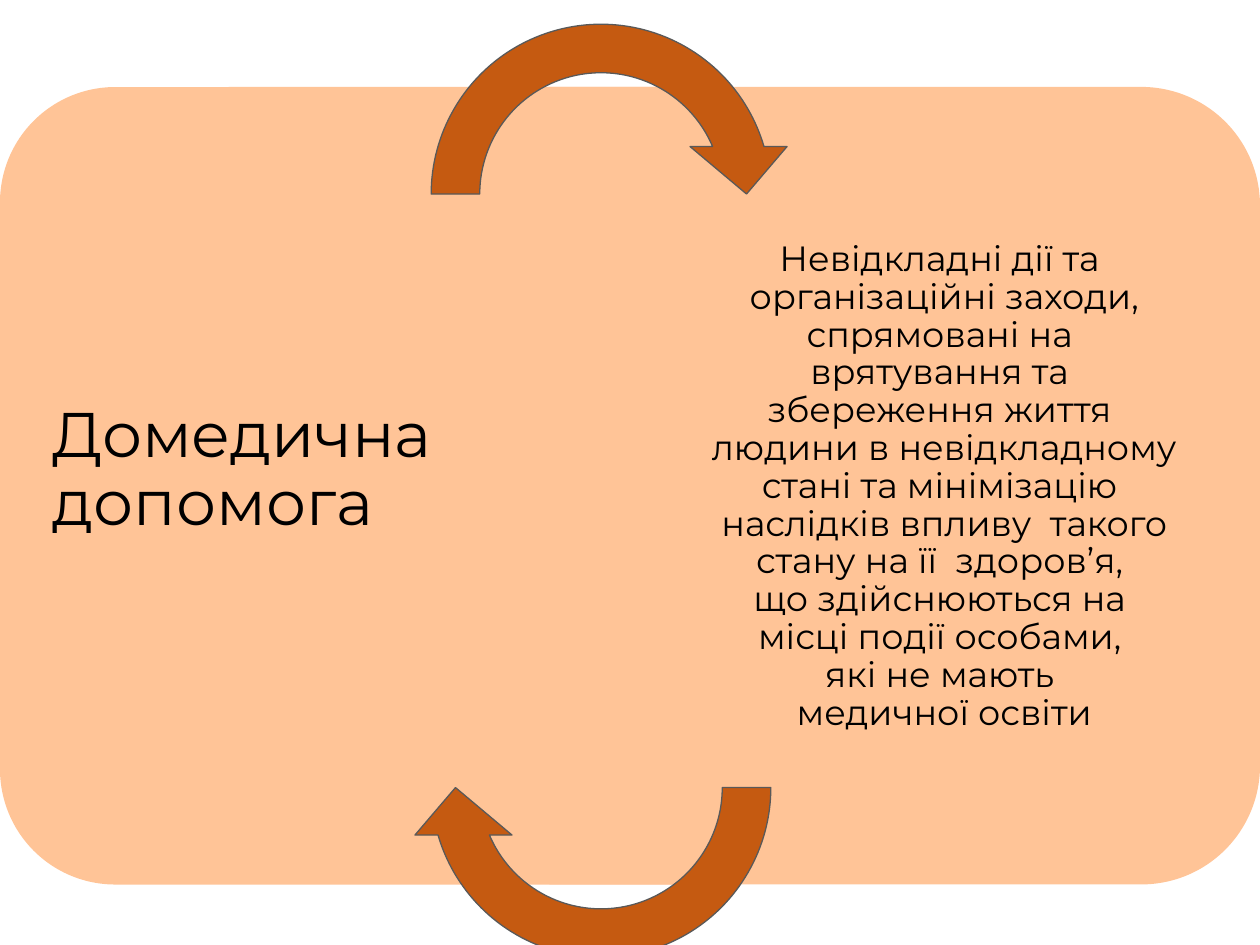
import pptx
import pptx.dml.color
import pptx.enum.shapes
import pptx.enum.text
import pptx.util

SHAPES = pptx.enum.shapes.MSO_SHAPE
ALIGN = pptx.enum.text.PP_ALIGN
inches = pptx.util.Inches

WIDTH, HEIGHT = 10, 7.5
PEACH, RUST, GREY, BLACK = "FFC497", "C55A11", "595959", "000000"
FONT = "Montserrat"

TERM = ["Домедична допомога"]
DEFINITION = [
    "Невідкладні дії та ",
    "організаційні заходи, спрямовані на ",
    "врятування та ",
    "збереження життя ",
    "людини в невідкладному стані та мінімізацію ",
    "наслідків впливу  такого стану на її  здоров’я, ",
    "що здійснюються на ",
    "місці події особами, ",
    "які не мають ",
    "медичної освіти",
]


def color(hex_text):
    return pptx.dml.color.RGBColor.from_string(hex_text)


def add_solid(slide, kind, box, rotation, adjustments, fill, line=None):
    solid = slide.shapes.add_shape(kind, *map(inches, box))
    solid.rotation = rotation
    solid.shadow.inherit = False
    for index, value in enumerate(adjustments):
        solid.adjustments[index] = value
    solid.fill.solid()
    solid.fill.fore_color.rgb = color(fill)
    if line:
        solid.line.color.rgb = color(line)
        solid.line.width = pptx.util.Pt(0.75)
    else:
        solid.line.fill.background()


def add_panel(slide, box, rotation):
    """Fill the upright box with a half card turned so its round corners face outward."""
    left, top, width, height = box
    turned = (left + (width - height) / 2, top + (height - width) / 2, height, width)
    add_solid(slide, SHAPES.ROUND_2_SAME_RECTANGLE, turned, rotation, (0.167, 0), PEACH)


def add_panel_text(slide, box, paragraphs, size, align, insets, space_after=0):
    frame = slide.shapes.add_textbox(*map(inches, box)).text_frame
    frame.word_wrap = True
    frame.vertical_anchor = pptx.enum.text.MSO_ANCHOR.MIDDLE
    for side, inset in zip(("left", "top", "right", "bottom"), insets):
        setattr(frame, f"margin_{side}", inches(inset))
    paragraph_format = {
        "alignment": align,
        "line_spacing": 0.9,
        "space_after": pptx.util.Pt(space_after),
    }
    for index, words in enumerate(paragraphs):
        paragraph = frame.add_paragraph() if index else frame.paragraphs[0]
        for name, value in paragraph_format.items():
            setattr(paragraph, name, value)
        run = paragraph.add_run()
        run.text = words
        run.font.name = FONT
        run.font.size = pptx.util.Pt(size)
        run.font.color.rgb = color(BLACK)


def add_cycle_arrows(slide, left, tops, side):
    bend = (0.125, 11.42319, 204.57681, 108, 0.125)
    for top, rotation in zip(tops, (0, 180)):
        add_solid(slide, SHAPES.CIRCULAR_ARROW, (left, top, side, side),
                  rotation, bend, RUST, GREY)


def build_slide(slide):
    panel_top, panel_height = 0.69, 6.33
    text_top, text_height = 0.97, 5.79
    add_panel(slide, (0, panel_top, 5.48, panel_height), 270)
    add_panel_text(slide, (0.27, text_top, 5.21, text_height), TERM, 36,
                   ALIGN.LEFT, (0.15, 0, 0.23, 0.25), space_after=18)
    add_panel(slide, (WIDTH - 5.64, panel_top, 5.64, panel_height), 90)
    add_panel_text(slide, (4.36, text_top, 5.37, text_height), DEFINITION, 20,
                   ALIGN.CENTER, (0.98, 0.14, 0.08, 0.14))
    add_cycle_arrows(slide, 3.23, (0, 4.71), 3.08)


def main():
    deck = pptx.Presentation()
    deck.slide_width, deck.slide_height = inches(WIDTH), inches(HEIGHT)
    build_slide(deck.slides.add_slide(deck.slide_layouts[6]))
    deck.save("out.pptx")


if __name__ == "__main__":
    main()
